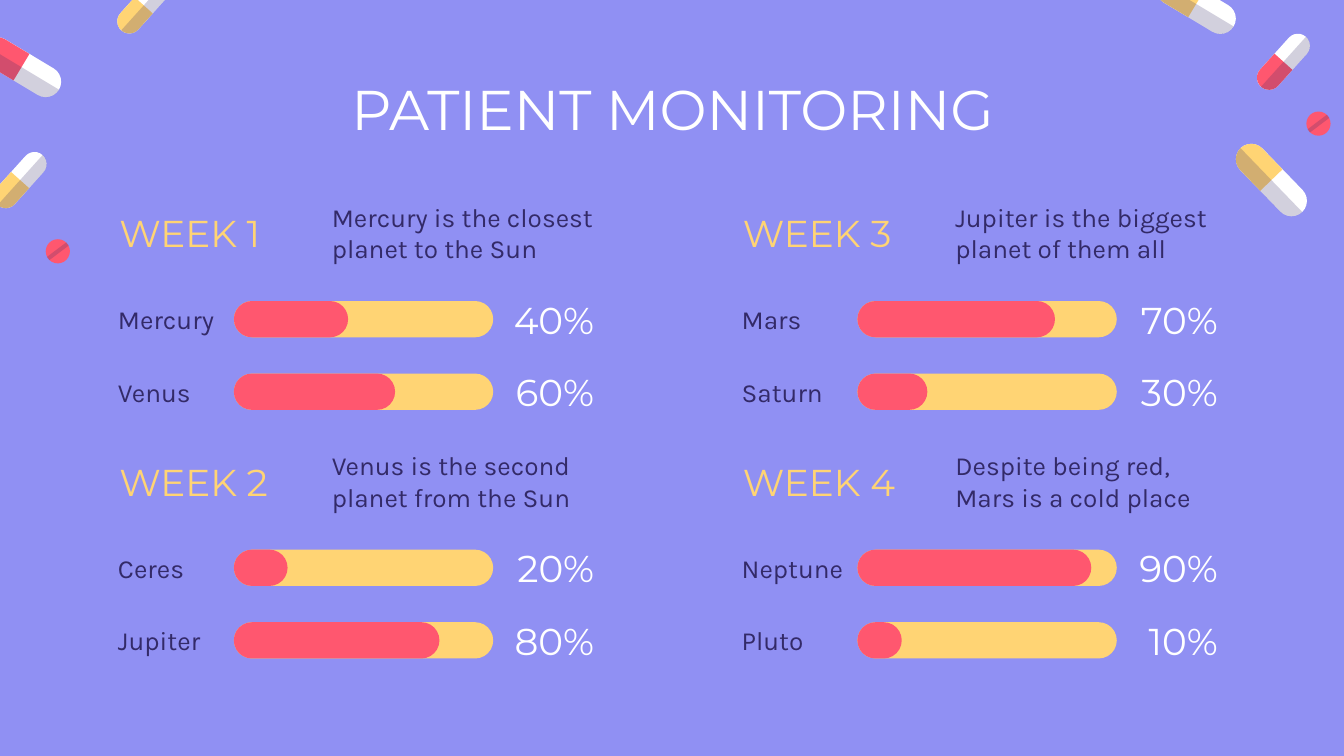
from math import cos, pi, radians, sin

from lxml import etree
from pptx import Presentation
from pptx.dml.color import RGBColor
from pptx.enum.shapes import MSO_SHAPE
from pptx.enum.text import MSO_ANCHOR, MSO_AUTO_SIZE, PP_ALIGN
from pptx.oxml.ns import qn
from pptx.util import Inches, Pt

LEFT, CENTER, RIGHT = PP_ALIGN.LEFT, PP_ALIGN.CENTER, PP_ALIGN.RIGHT
MIDDLE, NO_FIT = MSO_ANCHOR.MIDDLE, MSO_AUTO_SIZE.NONE
OVAL, ROUNDED = MSO_SHAPE.OVAL, MSO_SHAPE.ROUNDED_RECTANGLE

LILAC, WHITE, YELLOW, RED, NAVY = "9090F3", "FFFFFF", "FFD474", "FF576F", "332A68"
DISPLAY, BODY = "Montserrat", "Karla"
SHADE_OPACITY = 22

TITLE = "PATIENT MONITORING"

# Column, row, heading, description, then (planet, percentage, filled width in inches)
WEEKS = [
    (0, 0, "WEEK 1", "Mercury is the closest planet to the Sun",
     [("Mercury", "40%", 0.85), ("Venus", "60%", 1.2)]),
    (0, 1, "WEEK 2", "Venus is the second planet from the Sun",
     [("Ceres", "20%", 0.4), ("Jupiter", "80%", 1.53)]),
    (1, 0, "WEEK 3", "Jupiter is the biggest planet of them all",
     [("Mars", "70%", 1.47), ("Saturn", "30%", 0.52)]),
    (1, 1, "WEEK 4", "Despite being red, Mars is a cold place",
     [("Neptune", "90%", 1.74), ("Pluto", "10%", 0.33)]),
]

# Centre x, centre y, length, thickness, angle, colour of the tinted half
CAPSULES = [
    (0.16, 0.5, 0.65, 0.23, 31, RED),
    (9.55, 0.46, 0.5, 0.18, -48, RED),
    (9.46, 1.34, 0.66, 0.23, 46, YELLOW),
    (0.15, 1.34, 0.5, 0.18, -48, YELLOW),
    (8.9, 0.03, 0.65, 0.23, 31, YELLOW),
    (1.07, 0.04, 0.5, 0.18, -48, YELLOW),
]
TABLETS = [(0.43, 1.87), (9.81, 0.92)]
TABLET_SIZE, GROOVE, GROOVE_ANGLE = 0.18, 0.03, -37

COLUMN_X, COLUMN_STEP = 0.79, 4.64
WEEK_Y, WEEK_STEP = 1.46, 1.85
HEADING_W, HEADING_H = 1.47, 0.54
DESCRIPTION_DX, DESCRIPTION_W = 1.58, 2.21
BAR_DX, BAR_DY, BAR_STEP = 0.95, 0.78, 0.54
BAR_W, BAR_H = 1.93, 0.27
PLANET_W, PERCENT_W, PERCENT_H = 0.96, 0.85, 0.54


def rgb(color):
    return RGBColor.from_string(color)


def paint(shape, color, opacity=100):
    shape.shadow.inherit = False
    shape.line.fill.background()
    shape.fill.solid()
    shape.fill.fore_color.rgb = rgb(color)
    if opacity < 100:
        clr = shape.element.spPr.find(qn("a:solidFill"))[0]
        etree.SubElement(clr, qn("a:alpha"), val=str(opacity * 1000))


def write(frame, text, size, font, color, align=LEFT):
    frame.word_wrap = True
    frame.auto_size = NO_FIT
    frame.vertical_anchor = MIDDLE
    frame.margin_left = frame.margin_right = Inches(0.1)
    frame.margin_top = frame.margin_bottom = Inches(0.1)
    paragraph = frame.paragraphs[0]
    paragraph.alignment = align
    run = paragraph.add_run()
    run.text = text
    run.font.size = Pt(size)
    run.font.name = font
    run.font.color.rgb = rgb(color)


def add_text(slide, x, y, w, h, *style):
    box = slide.shapes.add_textbox(Inches(x), Inches(y), Inches(w), Inches(h))
    write(box.text_frame, *style)


def add_preset(slide, kind, x, y, w, h, color):
    shape = slide.shapes.add_shape(kind, Inches(x), Inches(y), Inches(w), Inches(h))
    paint(shape, color)
    return shape


def add_outline(slide, x, y, angle, points, color, opacity=100):
    """Draw a closed outline given around (x, y) and turned by angle degrees."""
    c, s = cos(radians(angle)), sin(radians(angle))
    turned = [(Inches(x + u * c - v * s), Inches(y + u * s + v * c)) for u, v in points]
    builder = slide.shapes.build_freeform(*turned[0])
    builder.add_line_segments(turned[1:], close=True)
    paint(builder.convert_to_shape(), color, opacity)


def arc(center, radius, start, end, steps=12):
    angles = [radians(start) + (end - start) * pi / 180 * i / steps for i in range(steps + 1)]
    return [(center + radius * cos(a), radius * sin(a)) for a in angles]


def add_capsule(slide, x, y, length, thickness, angle, color):
    r = thickness / 2
    reach = length / 2 - r
    tinted_end = arc(-reach, r, 90, 270)
    whole = arc(reach, r, -90, 90) + tinted_end
    tinted = tinted_end + [(0, -r), (0, r)]
    shaded = arc(reach, r, 0, 90) + arc(-reach, r, 90, 180)
    add_outline(slide, x, y, angle, whole, WHITE)
    add_outline(slide, x, y, angle, tinted, color)
    add_outline(slide, x, y, angle, shaded, NAVY, SHADE_OPACITY)


def add_tablet(slide, x, y):
    r, g = TABLET_SIZE / 2, GROOVE / 2
    add_preset(slide, OVAL, x - r, y - r, TABLET_SIZE, TABLET_SIZE, RED)
    groove = [(-r, -g), (r, -g), (r, g), (-r, g)]
    add_outline(slide, x, y, GROOVE_ANGLE, groove, NAVY, SHADE_OPACITY)


def add_progress(slide, x, y, planet, percent, filled):
    for width, color in ((BAR_W, YELLOW), (filled, RED)):
        add_preset(slide, ROUNDED, x, y, width, BAR_H, color).adjustments[0] = 0.5
    add_text(slide, x - PLANET_W, y, PLANET_W, BAR_H, planet, 14, BODY, NAVY)
    add_text(slide, x + BAR_W, y + (BAR_H - PERCENT_H) / 2, PERCENT_W, PERCENT_H,
             percent, 20, DISPLAY, WHITE, RIGHT)


def add_week(slide, column, row, heading, description, progress):
    x = COLUMN_X + column * COLUMN_STEP
    y = WEEK_Y + row * WEEK_STEP
    add_text(slide, x, y, HEADING_W, HEADING_H, heading, 20, DISPLAY, YELLOW)
    add_text(slide, x + DESCRIPTION_DX, y, DESCRIPTION_W, HEADING_H,
             description, 14, BODY, NAVY)
    for i, entry in enumerate(progress):
        add_progress(slide, x + BAR_DX, y + BAR_DY + i * BAR_STEP, *entry)


def main():
    prs = Presentation()
    prs.slide_width = Inches(10)
    prs.slide_height = prs.slide_width * 9 // 16
    slide = prs.slides.add_slide(prs.slide_layouts[5])
    slide.background.fill.solid()
    slide.background.fill.fore_color.rgb = rgb(LILAC)

    for capsule in CAPSULES:
        add_capsule(slide, *capsule)
    for tablet in TABLETS:
        add_tablet(slide, *tablet)

    title = slide.shapes.title
    title.left, title.top = Inches(0.79), Inches(0.49)
    title.width, title.height = Inches(8.43), Inches(0.63)
    write(title.text_frame, TITLE, 30, DISPLAY, WHITE, CENTER)

    for week in WEEKS:
        add_week(slide, *week)
    prs.save("out.pptx")


if __name__ == "__main__":
    main()
